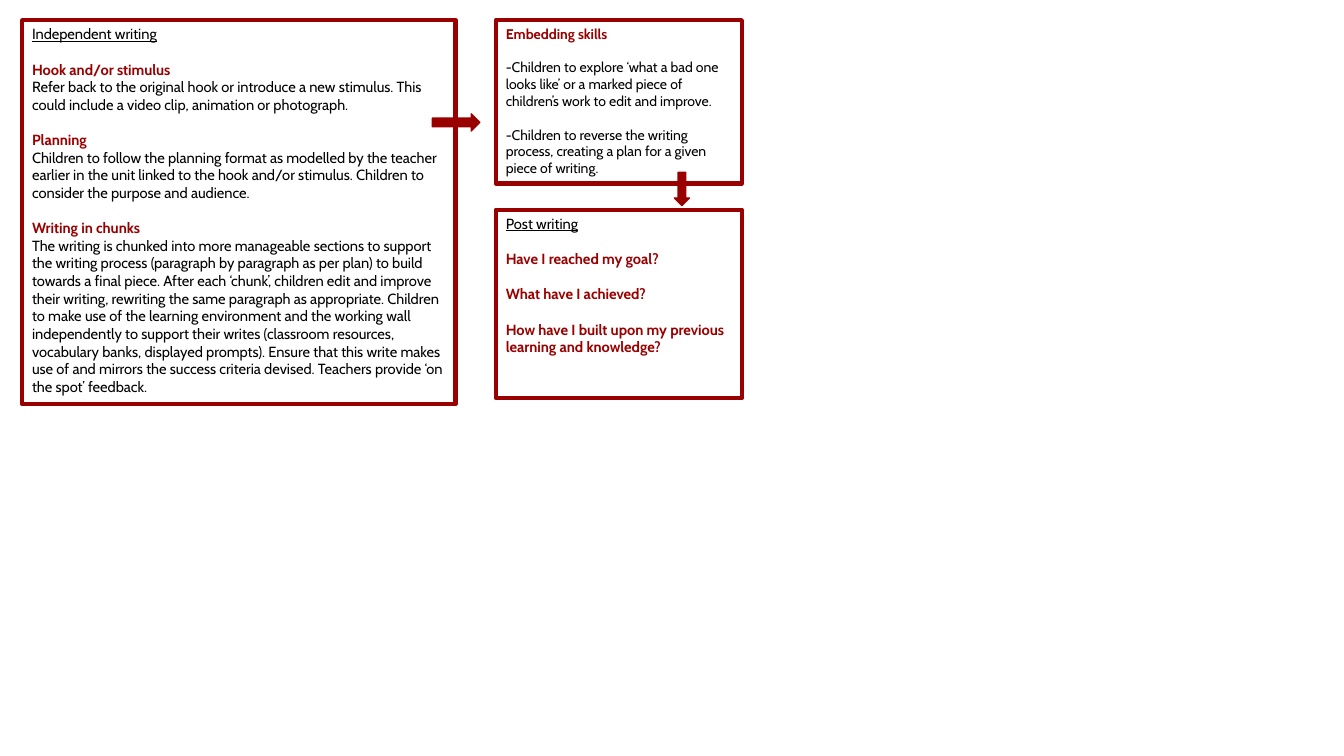
from pptx import Presentation
from pptx.dml.color import RGBColor
from pptx.enum.shapes import MSO_SHAPE
from pptx.enum.text import MSO_ANCHOR, PP_ALIGN
from pptx.util import Pt

COLORS = {"red": "990000", "black": "000000"}
FORMATS = {
    "title": {"underline": True, "bold": False, "color": "black"},
    "head": {"underline": False, "bold": True, "color": "red"},
    "body": {"underline": False, "bold": False, "color": "black"},
}


class Board:
    """Holds the slide and the style of its elements."""

    font = "Cabin"

    def __init__(self, slide):
        self.slide = slide

    def color(self, name):
        return RGBColor.from_string(COLORS[name])

    def shape(self, kind, frame, line_width):
        sp = self.slide.shapes.add_shape(kind, *(Pt(v) for v in frame))
        sp.shadow.inherit = False
        sp.line.color.rgb = self.color("red")
        sp.line.width = Pt(line_width)
        return sp

    def box(self, frame, size, gap, paragraphs):
        """Framed text; each paragraph is (format name, gap before, text)."""
        sp = self.shape(MSO_SHAPE.RECTANGLE, frame, 3)
        sp.fill.background()
        tf = sp.text_frame
        tf.word_wrap = True
        tf.vertical_anchor = MSO_ANCHOR.TOP
        for i, (style, spaced, text) in enumerate(paragraphs):
            p = tf.add_paragraph() if i else tf.paragraphs[0]
            p.alignment = PP_ALIGN.LEFT
            p.space_before = Pt(gap if spaced else 0)
            r = p.add_run()
            r.text = text
            values = {"name": self.font, "size": Pt(size), **FORMATS[style]}
            r.font.color.rgb = self.color(values.pop("color"))
            for name, value in values.items():
                setattr(r.font, name, value)

    def arrow(self, frame, rotation=0):
        sp = self.shape(MSO_SHAPE.RIGHT_ARROW, frame, 1)
        sp.fill.solid()
        sp.fill.fore_color.rgb = self.color("red")
        sp.rotation = rotation


def main():
    prs = Presentation()
    prs.slide_width, prs.slide_height = Pt(960), Pt(540)
    board = Board(prs.slides.add_slide(prs.slide_layouts[6]))
    top, right_col, right_width = 14.4, 354.24, 175.68

    # Independent writing
    board.box((15.84, top, 309.6, 274.32), 10.5, 12.6, [
        ("title", False, "Independent writing"),
        ("head", True, "Hook and/or stimulus"),
        ("body", False, "Refer back to the original hook or introduce a new stimulus. "
         "This could include a video clip, animation or photograph."),
        ("head", True, "Planning"),
        ("body", False, "Children to follow the planning format as modelled by the "
         "teacher earlier in the unit linked to the hook and/or stimulus. Children to "
         "consider the purpose and audience."),
        ("head", True, "Writing in chunks"),
        ("body", False, "The writing is chunked into more manageable sections to support "
         "the writing process (paragraph by paragraph as per plan) to build towards a "
         "final piece. After each ‘chunk’, children edit and improve their writing, "
         "rewriting the same paragraph as appropriate. Children to make use of the "
         "learning environment and the working wall independently to support their "
         "writes (classroom resources, vocabulary banks, displayed prompts). Ensure that "
         "this write makes use of and mirrors the success criteria devised. Teachers "
         "provide ‘on the spot’ feedback."),
    ])
    board.arrow((308.88, 81.36, 33.84, 12.24))

    # Embedding skills
    board.box((right_col, top, right_width, 116.64), 10, 12, [
        ("head", False, "Embedding skills"),
        ("body", True, "-Children to explore ‘what a bad one looks like’ or a marked "
         "piece of children’s work to edit and improve."),
        ("body", True, "-Children to reverse the writing process, creating a plan for a "
         "given piece of writing."),
    ])
    board.arrow((475.2, 129.6, 23.76, 10.8), rotation=90)

    # Post writing
    board.box((right_col, 149.76, right_width, 134.64), 10.5, 12.6, [
        ("title", False, "Post writing"),
        ("head", True, "Have I reached my goal?"),
        ("head", True, "What have I achieved?"),
        ("head", True, "How have I built upon my previous learning and knowledge?"),
    ])

    prs.save("out.pptx")


if __name__ == "__main__":
    main()
